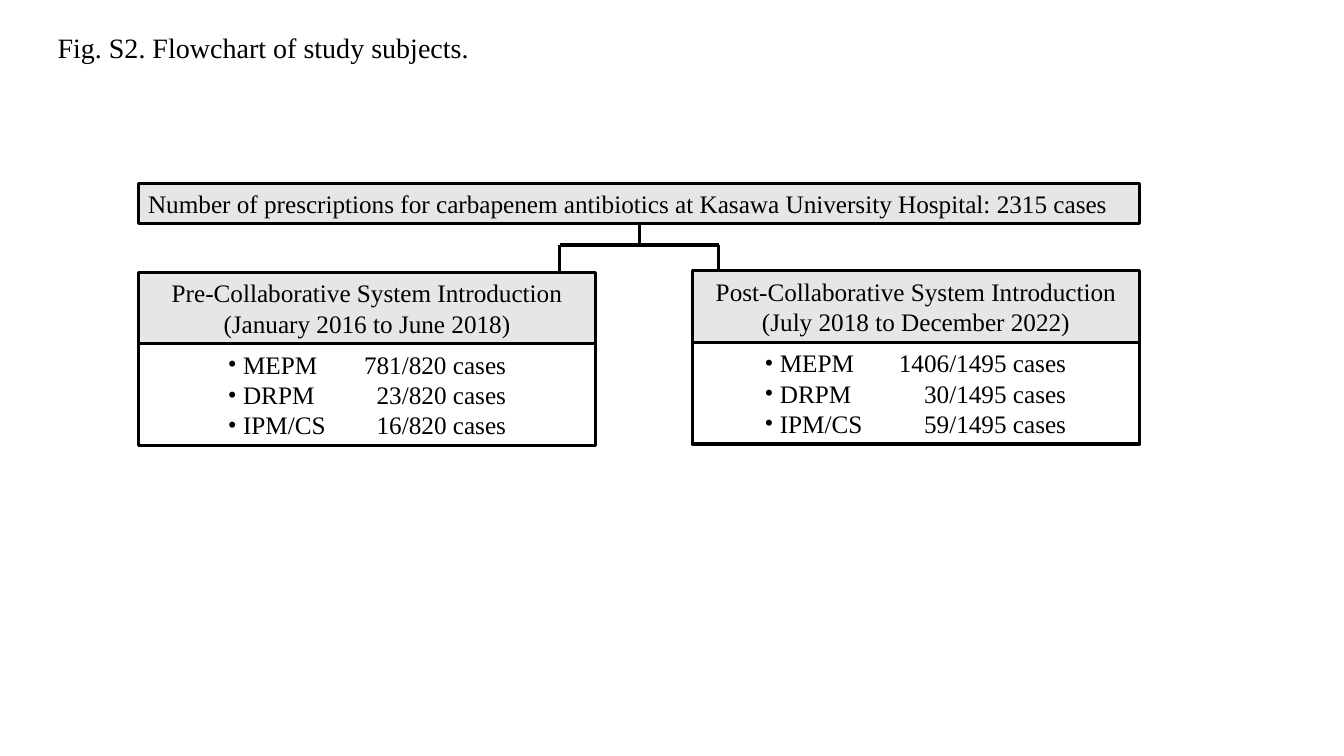
from lxml import etree
from pptx import Presentation, util as u
from pptx.dml.color import RGBColor
from pptx.enum import shapes, text
from pptx.oxml.ns import qn

WIDE, HIGH = 13.33, 7.5
FONT, INK, GREY, WHITE = "Times New Roman", "000000", "E7E6E6", "FFFFFF"
LEFT, ALL = 10.28, 74.5
HEAD, BODY = 9.47, 13.47
STEM, FORK = 47.57, 32.4
GROUPS = [
    (LEFT, 36, 34.06, 0.79, 2.76,
     "Pre-Collaborative System Introduction (January 2016 to June 2018)",
     ["MEPM\t781/820 cases", "DRPM\t23/820 cases", "IPM/CS\t16/820 cases"]),
    (51.5, 35.8, 33.31, 0.62, 2.99,
     "Post-Collaborative System Introduction (July 2018 to December 2022)",
     ["MEPM\t1406/1495 cases", "DRPM\t30/1495 cases", "IPM/CS\t59/1495 cases"]),
]


def paint(part, shade):
    """Give a fill a solid colour from a hex string."""
    part.solid()
    part.fore_color.rgb = RGBColor.from_string(shade)


def across(share):
    """Turn a percentage of the slide width into a length."""
    return u.Inches(WIDE * share / 100)


def down(share):
    """Turn a percentage of the slide height into a length."""
    return u.Inches(HIGH * share / 100)


def style(frame, size, align):
    """Format every paragraph and run of a text frame."""
    frame.word_wrap = True
    for para in frame.paragraphs:
        para.alignment = align
        for run in para.runs:
            run.font.name, run.font.size = FONT, u.Pt(size)
            paint(run.font.fill, INK)


def box(slide, x, y, w, h, words, shade, align):
    """Add an outlined box with text."""
    shape = slide.shapes.add_shape(
        shapes.MSO_SHAPE.RECTANGLE, across(x), down(y), across(w), down(h))
    shape.shadow.inherit = False
    paint(shape.fill, shade)
    paint(shape.line.fill, INK)
    shape.line.width = u.Pt(2.25)
    shape.text_frame.text = words
    style(shape.text_frame, 18, align)
    return shape


def list_rows(frame, inset, stop):
    """Set bullets and a right tab on the rows of a box."""
    frame.margin_left = u.Inches(inset + 0.1)
    hang = u.Inches(0.15)
    for para in frame.paragraphs:
        props = para._p.get_or_add_pPr()
        props.set("marL", str(hang))
        props.set("indent", str(-hang))
        etree.SubElement(props, qn("a:buFont"), typeface=FONT)
        etree.SubElement(props, qn("a:buChar"), char="•")
        tabs = etree.SubElement(props, qn("a:tabLst"))
        etree.SubElement(tabs, qn("a:tab"), pos=str(u.Inches(stop)), algn="r")


def link(slide, x, y, to_x, to_y):
    """Draw a straight black line."""
    line = slide.shapes.add_connector(
        shapes.MSO_CONNECTOR.STRAIGHT,
        across(x), down(y), across(to_x), down(to_y))
    paint(line.line.fill, INK)
    line.line.width = u.Pt(2.25)
    etree.SubElement(line._element.spPr, qn("a:effectLst"))


def title(slide, words):
    """Place and format the slide title."""
    shape = slide.shapes.title
    shape.left, shape.top = across(3.53), down(3.33)
    shape.width, shape.height = across(94.82), down(10)
    frame = shape.text_frame
    frame.text = words
    frame.auto_size = text.MSO_AUTO_SIZE.NONE
    frame.vertical_anchor = text.MSO_ANCHOR.TOP
    style(frame, 20, text.PP_ALIGN.LEFT)


def group(slide, x, y, w, inset, stop, name, rows):
    """Add a period heading with its case counts below."""
    body = box(slide, x, y + HEAD, w, BODY, "\n".join(rows), WHITE,
               text.PP_ALIGN.LEFT)
    list_rows(body.text_frame, inset, stop)
    box(slide, x, y, w, HEAD, name, GREY, text.PP_ALIGN.CENTER)


def main():
    """Build the flowchart slide."""
    deck = Presentation()
    deck.slide_width, deck.slide_height = u.Inches(WIDE), u.Inches(HIGH)
    slide = deck.slides.add_slide(deck.slide_layouts[5])
    title(slide, "Fig. S2. Flowchart of study subjects.")
    arms = 41.64, 53.49
    link(slide, arms[0], FORK, arms[1], FORK)
    link(slide, STEM, 29.5, STEM, FORK)
    for arm in arms:
        link(slide, arm, FORK, arm, 35.8)
    box(slide, LEFT, 24.27, ALL, 5.33,
        "Number of prescriptions for carbapenem antibiotics at "
        "Kasawa University Hospital: 2315 cases", GREY, text.PP_ALIGN.LEFT)
    for item in GROUPS:
        group(slide, *item)
    deck.save("out.pptx")


if __name__ == "__main__":
    main()
